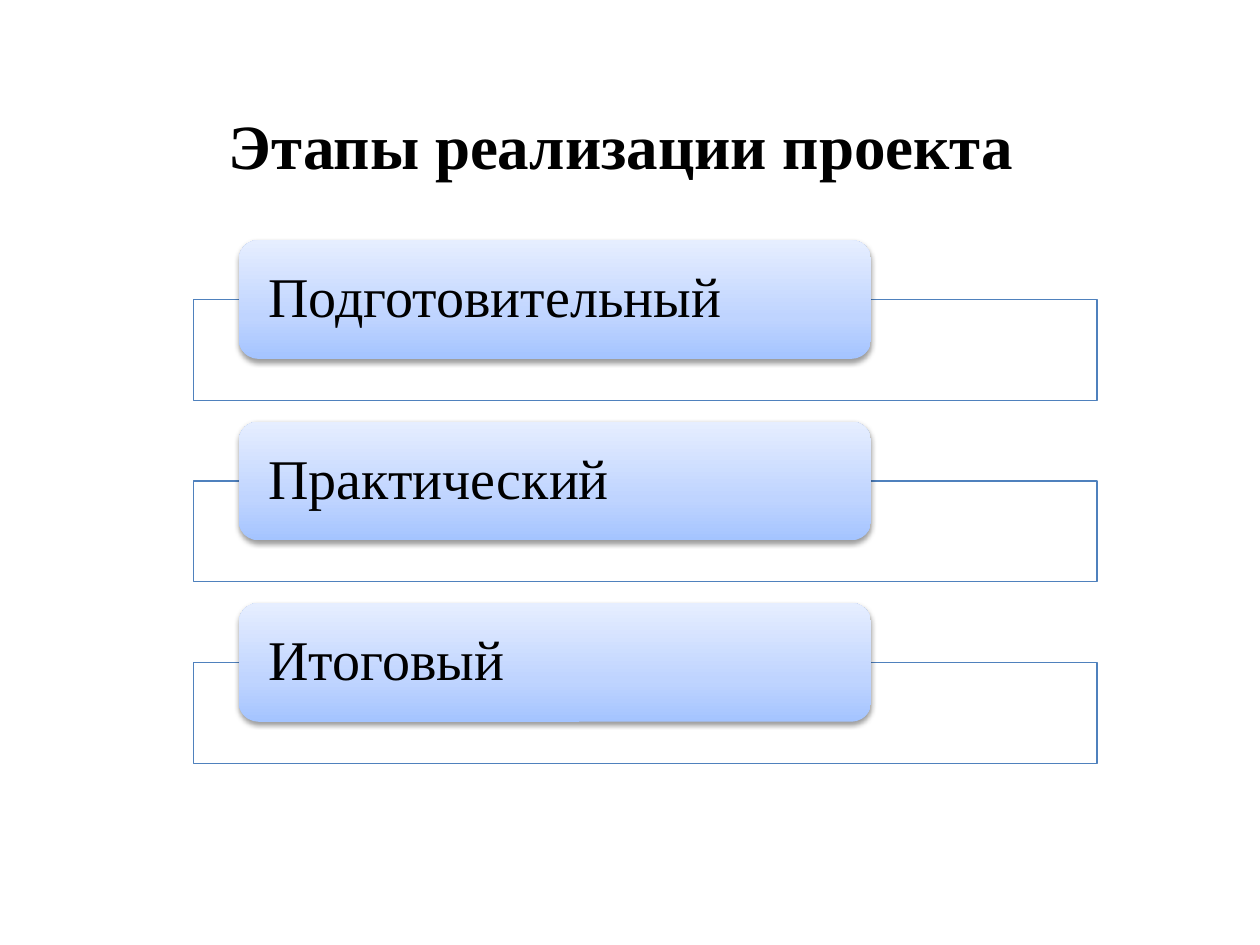
from dataclasses import dataclass

from lxml.etree import SubElement
from pptx import Presentation
from pptx.dml.color import RGBColor
from pptx.enum.shapes import MSO_SHAPE
from pptx.enum.text import MSO_ANCHOR, PP_ALIGN
from pptx.oxml import parse_xml
from pptx.oxml.ns import nsdecls, qn
from pptx.shapes.autoshape import Shape
from pptx.slide import Slide
from pptx.text.text import _Paragraph as Paragraph
from pptx.util import Pt


@dataclass(frozen=True)
class Theme:
    font: str = "Times New Roman"
    title_size: float = 36
    label_size: float = 32
    text: str = "000000"
    frame_fill: str = "FFFFFF"
    frame_line: str = "4F81BD"
    shadow: str = "000000"
    gradient: tuple[tuple[int, str], ...] = (
        (0, "A4C4FF"), (35, "BFD4FF"), (100, "E6EEFF"))


@dataclass(frozen=True)
class Box:
    left: float
    top: float
    width: float
    height: float

    def lowered(self, distance: float) -> "Box":
        return Box(self.left, self.top + distance, self.width, self.height)

    def lengths(self) -> tuple[Pt, Pt, Pt, Pt]:
        return Pt(self.left), Pt(self.top), Pt(self.width), Pt(self.height)


THEME = Theme()
TITLE = "Этапы реализации проекта"
STAGES = ("Подготовительный", "Практический", "Итоговый")
TITLE_BOX = Box(31, 37.5, 648, 90)
FRAME = Box(110.7, 171.2, 516.2, 57.6)
LABEL = Box(136.4, 137.2, 361.4, 67.9)
STAGE_PITCH = 103.68


def add_text(paragraph: Paragraph, text: str, size: float, bold: bool = False) -> None:
    run = paragraph.add_run()
    run.text = text
    run.font.name = THEME.font
    run.font.size = Pt(size)
    run.font.bold = bold
    run.font.color.rgb = RGBColor.from_string(THEME.text)


def add_plain_shape(slide: Slide, kind: MSO_SHAPE, box: Box) -> Shape:
    shape = slide.shapes.add_shape(kind, *box.lengths())
    shape.shadow.inherit = False
    return shape


def fill_with_gradient(shape: Shape) -> None:
    """Fill from bottom to top with the three theme colours."""
    stops = "".join(
        f'<a:gs pos="{position * 1000}"><a:srgbClr val="{color}"/></a:gs>'
        for position, color in THEME.gradient)
    gradient = parse_xml(
        f'<a:gradFill {nsdecls("a")} rotWithShape="1"><a:gsLst>{stops}</a:gsLst>'
        '<a:lin ang="16200000" scaled="0"/></a:gradFill>')
    shape.fill.background()
    properties = shape.element.spPr
    properties.replace(properties.find(qn("a:noFill")), gradient)


def add_soft_shadow(shape: Shape) -> None:
    effects = shape.element.spPr.find(qn("a:effectLst"))
    shadow = SubElement(
        effects, qn("a:outerShdw"), blurRad=str(Pt(3.1)), dist=str(Pt(1.6)),
        dir="5400000", rotWithShape="0")
    color = SubElement(shadow, qn("a:srgbClr"), val=THEME.shadow)
    SubElement(color, qn("a:alpha"), val="38000")


def add_frame(slide: Slide, box: Box) -> None:
    frame = add_plain_shape(slide, MSO_SHAPE.RECTANGLE, box)
    frame.fill.solid()
    frame.fill.fore_color.rgb = RGBColor.from_string(THEME.frame_fill)
    color = frame.element.spPr.find(qn("a:solidFill"))[0]
    SubElement(color, qn("a:alpha"), val="90000")
    frame.line.color.rgb = RGBColor.from_string(THEME.frame_line)
    frame.line.width = Pt(0.75)


def add_label(slide: Slide, box: Box, text: str) -> None:
    label = add_plain_shape(slide, MSO_SHAPE.ROUNDED_RECTANGLE, box)
    fill_with_gradient(label)
    label.line.fill.background()
    add_soft_shadow(label)
    text_frame = label.text_frame
    text_frame.word_wrap = True
    text_frame.vertical_anchor = MSO_ANCHOR.MIDDLE
    text_frame.margin_left = text_frame.margin_right = Pt(13.7)
    text_frame.margin_top = text_frame.margin_bottom = Pt(0)
    paragraph = text_frame.paragraphs[0]
    paragraph.alignment = PP_ALIGN.LEFT
    paragraph.line_spacing = 0.9
    add_text(paragraph, text, THEME.label_size)


def set_title(slide: Slide) -> None:
    title = slide.shapes.title
    title.left, title.top, title.width, title.height = TITLE_BOX.lengths()
    title.text_frame.vertical_anchor = MSO_ANCHOR.MIDDLE
    paragraph = title.text_frame.paragraphs[0]
    paragraph.alignment = PP_ALIGN.CENTER
    add_text(paragraph, TITLE, THEME.title_size, bold=True)


def main() -> None:
    presentation = Presentation()
    presentation.slide_width, presentation.slide_height = Pt(720), Pt(540)
    slide = presentation.slides.add_slide(
        presentation.slide_layouts.get_by_name("Title Only"))
    set_title(slide)
    for index, stage in enumerate(STAGES):
        add_frame(slide, FRAME.lowered(index * STAGE_PITCH))
        add_label(slide, LABEL.lowered(index * STAGE_PITCH), stage)
    presentation.save("out.pptx")


if __name__ == "__main__":
    main()
